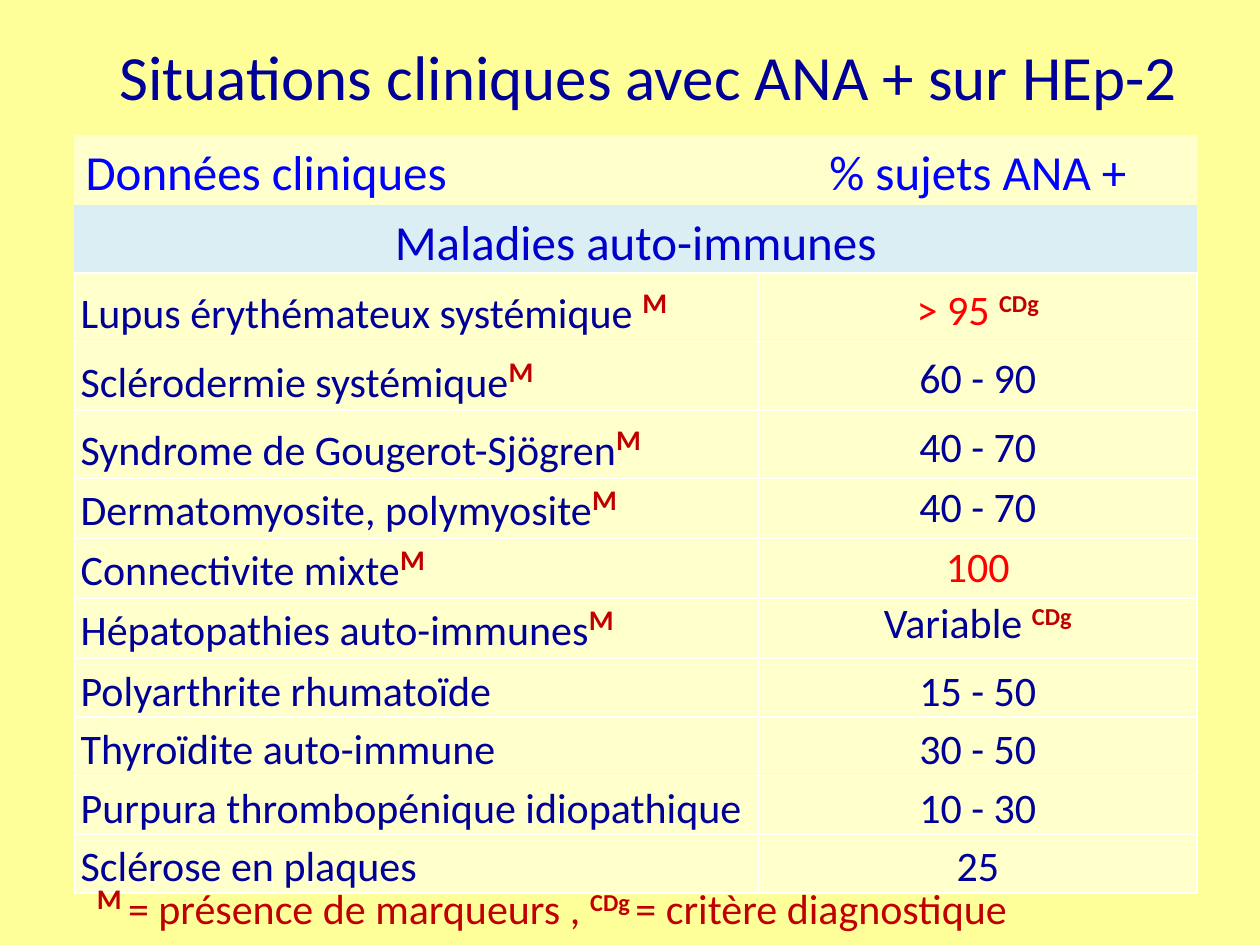
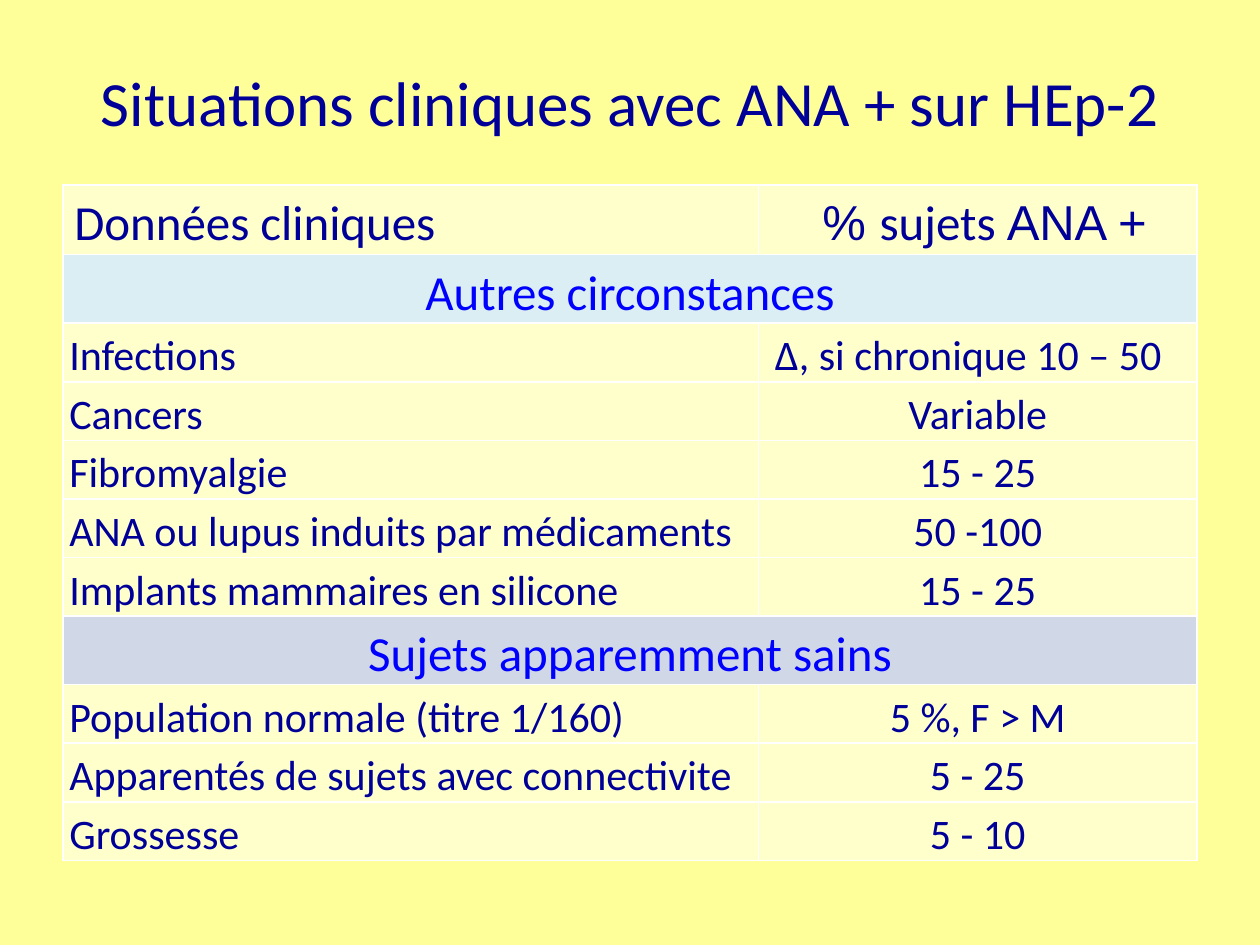
"""Builds two slides of tables on clinical situations with positive ANA."""
from lxml import etree
from pptx import Presentation
from pptx.dml.color import RGBColor
from pptx.enum.text import MSO_ANCHOR, PP_ALIGN
from pptx.oxml.ns import qn
from pptx.util import Inches, Pt

TOP, MIDDLE = MSO_ANCHOR.TOP, MSO_ANCHOR.MIDDLE
LEFT, CENTER = PP_ALIGN.LEFT, PP_ALIGN.CENTER
NAVY, BLUE, ROYAL = "000099", "0000FF", "0000CC"
RED, DARK_RED = "FF0000", "C00000"
YELLOW, CREAM, ICE, LAVENDER, WHITE = "FFFF99", "FFFFCC", "DBEEF4", "D0D8E8", "FFFFFF"
TITLE = "Situations cliniques avec ANA + sur HEp-2"
LEGEND = "^M ^= présence de marqueurs , ^CDg ^= critère diagnostique"
RED_VALUES = ("> 95 ^CDg", "100")
TALL, MARKED, PLAIN = 7.25, 6.35, 6.2

SLIDES = [
    dict(
        title=(3, 4.8, 96.9, 6.27), table=(5.9, 14.3), columns=(54.3, 34.8),
        header_colour=BLUE, header_borders=False, value_indent=0.05,
        header=[("% sujets ANA +", "Calibri")], legend=LEGEND,
        rows=[
            ("Maladies auto-immunes", ROYAL, ICE),
            ("Lupus érythémateux systémique ^M", "> 95 ^CDg", MIDDLE, 1.15, TALL),
            ("Sclérodermie systémique^M", "60 - 90", MIDDLE, 1.15, TALL),
            ("Syndrome de Gougerot-Sjögren^M", "40 - 70", MIDDLE, 1.15, TALL),
            ("Dermatomyosite, polymyosite^M", "40 - 70", MIDDLE, 1, MARKED),
            ("Connectivite mixte^M", "100", MIDDLE, 1, MARKED),
            ("Hépatopathies auto-immunes^M", "Variable ^CDg", TOP, 1, MARKED),
            ("Polyarthrite rhumatoïde", "15 - 50", TOP, 1.15, PLAIN),
            ("Thyroïdite auto-immune", "30 - 50", TOP, 1.15, PLAIN),
            ("Purpura thrombopénique idiopathique", "10 - 30", TOP, 1.15, PLAIN),
            ("Sclérose en plaques", "25", TOP, 1.15, PLAIN),
        ]),
    dict(
        title=(5, 6.13, 90, 9.2), table=(5, 19.6), columns=(55.2, 34.8),
        header_colour=NAVY, header_borders=True, value_indent=0.16,
        header=[("% ", "Arial"), ("sujets ", "Calibri"), ("ANA +", "Arial")], legend="",
        rows=[
            ("Autres circonstances", BLUE, ICE),
            ("Infections", "Δ, si chronique 10 – 50", TOP, 1.15, PLAIN),
            ("Cancers", "Variable", TOP, 1.15, PLAIN),
            ("Fibromyalgie", "15 - 25", TOP, 1.15, PLAIN),
            ("ANA ou lupus induits par médicaments", "50 -100", TOP, 1.15, PLAIN),
            ("Implants mammaires en silicone", "15 - 25", TOP, 1.15, PLAIN),
            ("Sujets apparemment sains", BLUE, LAVENDER),
            ("Population normale (titre 1/160)", "5 %, F > M", TOP, 1.15, PLAIN),
            ("Apparentés de sujets avec connectivite", "5 - 25", TOP, 1.15, PLAIN),
            ("Grossesse", "5 - 10", TOP, 1.15, PLAIN),
        ]),
]


def rgb(value):
    return RGBColor.from_string(value)


def write(p, text, size, colour, align=LEFT, spacing=1):
    p.alignment, p.line_spacing = align, spacing
    p.font.size, p.font.name = Pt(size), "Calibri"
    for i, part in enumerate(text.split("^")):
        if part:
            r = p.add_run()
            r.text = part
            r.font.name, r.font.size = "Calibri", Pt(size)
            r.font.color.rgb = rgb(colour)
            if i % 2:
                r.font.bold = True
                r.font.size = Pt(28 if part.strip() == "M" else 24)
                r.font.color.rgb = rgb(DARK_RED)
                r.font._element.set("baseline", "30000")


prs = Presentation()
prs.slide_width, prs.slide_height = Inches(10), Inches(7.5)
PX, PY = prs.slide_width / 100, prs.slide_height / 100

for data in SLIDES:
    s = prs.slides.add_slide(prs.slide_layouts[6])
    s.background.fill.solid()
    s.background.fill.fore_color.rgb = rgb(YELLOW)

    x, y, w, h = data["title"]
    tf = s.shapes.add_textbox(int(x * PX), int(y * PY), int(w * PX), int(h * PY)).text_frame
    tf.word_wrap, tf.vertical_anchor = True, MIDDLE
    write(tf.paragraphs[0], TITLE, 36, NAVY, CENTER)

    x, y = data["table"]
    rows, columns = data["rows"], data["columns"]
    heights = [7.35] + [TALL if len(row) == 3 else row[4] for row in rows]
    table = s.shapes.add_table(len(heights), 2, int(x * PX), int(y * PY),
                               int(sum(columns) * PX), int(sum(heights) * PY)).table
    table.first_row = table.horz_banding = False
    for column, width in zip(table.columns, columns):
        column.width = int(width * PX)
    for i, height in enumerate(heights):
        table.rows[i].height = int(height * PY)
        section = i > 0 and len(rows[i - 1]) == 3
        for cell in table.rows[i].cells:
            cell.margin_left = cell.margin_right = Inches(0.05)
            cell.margin_top = cell.margin_bottom = 0
            tcPr = cell._tc.get_or_add_tcPr()
            for side in ("lnL", "lnR", "lnT", "lnB"):
                ln = etree.SubElement(tcPr, qn("a:" + side), w="12700")
                if data["header_borders"] or i > 1 or (i == 1 and side == "lnB"):
                    solid = etree.SubElement(ln, qn("a:solidFill"))
                    etree.SubElement(solid, qn("a:srgbClr"), val=WHITE)
                else:
                    etree.SubElement(ln, qn("a:noFill"))
            cell.fill.solid()
            cell.fill.fore_color.rgb = rgb(rows[i - 1][2] if section else CREAM)

    label, value = table.rows[0].cells
    label.margin_left, value.margin_left = Inches(0.09), Inches(data["value_indent"])
    write(label.text_frame.paragraphs[0], "Données cliniques", 28, data["header_colour"], LEFT, 1.15)
    p = value.text_frame.paragraphs[0]
    for text, font in data["header"]:
        write(p, text, 28, data["header_colour"], CENTER, 1.15)
        p.runs[-1].font.name = font

    for i, row in enumerate(rows, 1):
        label, value = table.rows[i].cells
        if len(row) == 3:
            label.merge(value)
            label.vertical_anchor = MIDDLE
            write(label.text_frame.paragraphs[0], row[0], 28, row[1], CENTER, 1.15)
            continue
        name, share, anchor, spacing, height = row
        label.vertical_anchor = value.vertical_anchor = anchor
        if share.startswith("Δ"):
            value.margin_right = Inches(0.2)
        write(label.text_frame.paragraphs[0], name, 24, NAVY, LEFT, spacing)
        write(value.text_frame.paragraphs[0], share, 24,
              RED if share in RED_VALUES else NAVY, CENTER, spacing)

    if data["legend"]:
        tf = s.shapes.add_textbox(int(6.7 * PX), int(92 * PY), int(88.2 * PX), int(6.7 * PY)).text_frame
        tf.word_wrap = True
        write(tf.paragraphs[0], data["legend"], 24, DARK_RED)

prs.save("out.pptx")
